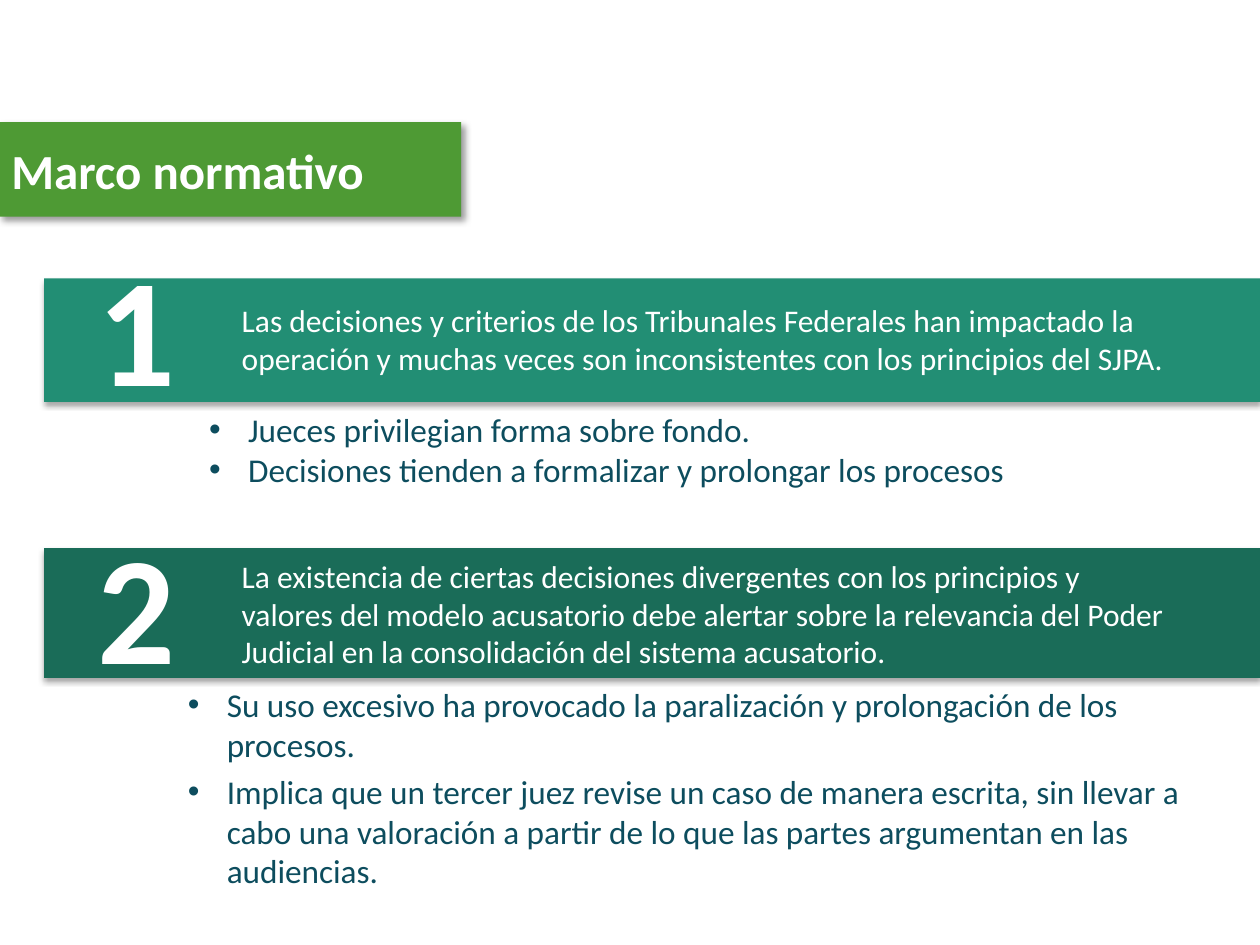
"""Build the "Marco normativo" slide with two numbered statements and their lists."""
from dataclasses import dataclass

from lxml import etree
from pptx import Presentation
from pptx.dml.color import RGBColor
from pptx.enum.shapes import MSO_SHAPE
from pptx.enum.text import MSO_ANCHOR, MSO_AUTO_SIZE, PP_ALIGN
from pptx.oxml.ns import qn
from pptx.shapes.autoshape import Shape
from pptx.slide import Slide
from pptx.util import Inches, Pt

RECTANGLE = MSO_SHAPE.RECTANGLE
LEFT, RIGHT = PP_ALIGN.LEFT, PP_ALIGN.RIGHT
TOP, MIDDLE = MSO_ANCHOR.TOP, MSO_ANCHOR.MIDDLE
NO_AUTOFIT = MSO_AUTO_SIZE.NONE
TWO_CONTENT_LAYOUT = 3


@dataclass(frozen=True)
class Theme:
    font: str = "Calibri"
    light: str = "FFFFFF"
    list_text: str = "0D4D5E"
    title_fill: str = "4E9A34"
    title_size: int = 28
    number_size: int = 88
    statement_size: int = 18
    list_size: int = 19


@dataclass(frozen=True)
class Box:
    left: float
    top: float
    width: float
    height: float


@dataclass(frozen=True)
class Shadow:
    opacity: int
    blur: float
    distance: float
    angle: int


@dataclass(frozen=True)
class Section:
    number: str
    statement: str
    items: tuple[str, ...]
    fill: str
    band: Box
    number_top: float
    statement_box: Box
    list_box: Box
    item_gap: int


THEME = Theme()
TITLE_BOX = Box(-0.01, 0.97, 3.67, 0.75)
TITLE_SHADOW = Shadow(40, 4, 3, 45)
BAND_SHADOW = Shadow(35, 3.1, 1.8, 90)
LIST_INDENT = 0.31
SECTIONS = (
    Section(
        "1",
        "Las decisiones y criterios de los Tribunales Federales han impactado la operación "
        "y muchas veces son inconsistentes con los principios del SJPA.",
        (
            "Jueces privilegian forma sobre fondo.",
            "Decisiones tienden a formalizar y prolongar los procesos",
        ),
        "228E74",
        Box(0.35, 2.21, 9.65, 0.98),
        1.8,
        Box(1.82, 2.34, 7.62, 0.71),
        Box(1.56, 3.2, 8.44, 0.79),
        0,
    ),
    Section(
        "2",
        "La existencia de ciertas decisiones divergentes con los principios y valores del "
        "modelo acusatorio debe alertar sobre la relevancia del Poder Judicial en la "
        "consolidación del sistema acusatorio.",
        (
            "Su uso excesivo ha provocado la paralización y prolongación de los procesos.",
            "Implica que un tercer juez revise un caso de manera escrita, sin llevar a cabo "
            "una valoración a partir de lo que las partes argumentan en las audiencias.",
        ),
        "1A6C58",
        Box(0.35, 4.35, 9.65, 1.03),
        4,
        Box(1.82, 4.37, 7.62, 1.01),
        Box(1.39, 5.38, 8.61, 1.75),
        4,
    ),
)


def lengths(box: Box) -> tuple[Inches, ...]:
    """Return the box as left, top, width and height lengths."""
    return tuple(Inches(value) for value in (box.left, box.top, box.width, box.height))


def place(shape: Shape, box: Box) -> None:
    """Move and size a shape."""
    shape.left, shape.top, shape.width, shape.height = lengths(box)


def paint(shape: Shape, color: str, shadow: Shadow) -> None:
    """Give a shape a plain fill, no line and a soft shadow."""
    shape.fill.solid()
    shape.fill.fore_color.rgb = RGBColor.from_string(color)
    shape.line.fill.background()
    shape.shadow.inherit = False
    effects = shape._element.spPr.find(qn("a:effectLst"))
    outer = etree.SubElement(
        effects,
        qn("a:outerShdw"),
        blurRad=str(Pt(shadow.blur)),
        dist=str(Pt(shadow.distance)),
        dir=str(shadow.angle * 60000),
        algn="tl",
        rotWithShape="0",
    )
    black = etree.SubElement(outer, qn("a:srgbClr"), val="000000")
    etree.SubElement(black, qn("a:alpha"), val=str(shadow.opacity * 1000))


def write(shape: Shape, text: str, size: int, color: str, bold: bool = False,
          alignment: PP_ALIGN = LEFT, anchor: MSO_ANCHOR = TOP) -> None:
    """Set and format the text of a shape."""
    frame = shape.text_frame
    frame.text = text
    frame.word_wrap = True
    frame.auto_size = NO_AUTOFIT
    frame.vertical_anchor = anchor
    for paragraph in frame.paragraphs:
        paragraph.alignment = alignment
        paragraph.space_before = Pt(0)
        for run in paragraph.runs:
            run.font.name = THEME.font
            run.font.size = Pt(size)
            run.font.bold = bold
            run.font.color.rgb = RGBColor.from_string(color)


def fill_list(shape: Shape, section: Section) -> None:
    """Write the bulleted items of a section into a body placeholder."""
    place(shape, section.list_box)
    write(shape, "\n".join(section.items), THEME.list_size, THEME.list_text)
    indent = Inches(LIST_INDENT)
    for index, paragraph in enumerate(shape.text_frame.paragraphs):
        properties = paragraph._p.get_or_add_pPr()
        properties.set("marL", str(indent))
        properties.set("indent", str(-indent))
        if index:
            paragraph.space_before = Pt(section.item_gap)


def add_band(slide: Slide, section: Section) -> None:
    """Add the coloured band of a section with its number and statement."""
    band = slide.shapes.add_shape(RECTANGLE, *lengths(section.band))
    paint(band, section.fill, BAND_SHADOW)
    number_box = Box(section.band.left, section.number_top, 1.14, 1.58)
    number = slide.shapes.add_textbox(*lengths(number_box))
    write(number, section.number, THEME.number_size, THEME.light, True, RIGHT)
    statement = slide.shapes.add_textbox(*lengths(section.statement_box))
    write(statement, section.statement, THEME.statement_size, THEME.light)


def main() -> None:
    """Build and save the presentation."""
    presentation = Presentation()
    presentation.slide_width, presentation.slide_height = Inches(10), Inches(7.5)
    slide = presentation.slides.add_slide(presentation.slide_layouts[TWO_CONTENT_LAYOUT])
    title, *lists = list(slide.placeholders)
    place(title, TITLE_BOX)
    paint(title, THEME.title_fill, TITLE_SHADOW)
    write(title, "Marco normativo", THEME.title_size, THEME.light, True, LEFT, MIDDLE)
    for section, placeholder in zip(SECTIONS, lists):
        add_band(slide, section)
        fill_list(placeholder, section)
    presentation.save("out.pptx")


if __name__ == "__main__":
    main()
